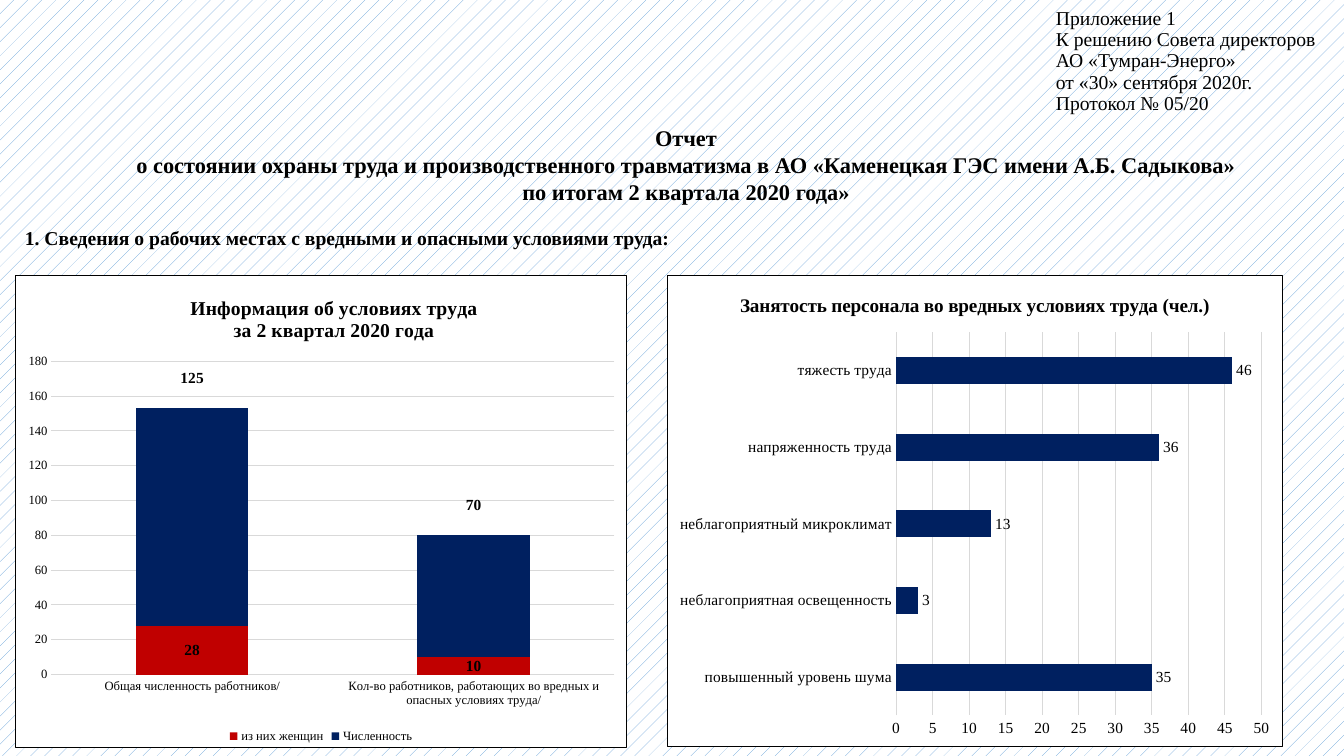
from dataclasses import dataclass

import lxml.etree
import pptx
import pptx.chart.chart
import pptx.chart.data
import pptx.chart.series
import pptx.dml.color
import pptx.enum.chart
import pptx.enum.dml
import pptx.enum.text
import pptx.oxml
import pptx.oxml.ns
import pptx.slide
import pptx.text.text
import pptx.util

PX = 12192000 // 1344
FONT = "Times New Roman"
COLORS = {"ink": "000000", "paper": "FFFFFF", "grid": "D9D9D9",
          "navy": "002060", "red": "C00000", "pattern": "5B9BD5"}
CHART_TYPES = pptx.enum.chart.XL_CHART_TYPE
LABELS = pptx.enum.chart.XL_LABEL_POSITION
ALIGN = pptx.enum.text.PP_ALIGN
ANCHOR = pptx.enum.text.MSO_ANCHOR


@dataclass(frozen=True)
class Area:
    left: int
    top: int
    width: int
    height: int

    def emu(self) -> list[int]:
        return [side * PX for side in (self.left, self.top, self.width, self.height)]


@dataclass(frozen=True)
class TextBlock:
    area: Area
    paras: tuple[str, ...]
    size: int
    bold: bool = True
    wrap: bool = True
    align: ALIGN = ALIGN.LEFT
    spacing: float = 1.0
    anchor: ANCHOR = ANCHOR.TOP


@dataclass(frozen=True)
class Bars:
    name: str
    values: tuple[int, ...]
    color: str
    position: LABELS
    label_shifts: tuple[int, ...] = ()


@dataclass(frozen=True)
class ChartPanel:
    area: Area
    plot: Area
    kind: CHART_TYPES
    title: tuple[str, ...]
    title_size: float
    title_corner: tuple[int, int] | None
    categories: tuple[str, ...]
    series: tuple[Bars, ...]
    axis_size: int
    gap: int
    stacked: bool


TEXTS = (
    TextBlock(Area(15, 221, 670, 34),
              ("1. Сведения о рабочих местах с вредными и опасными условиями труда:",),
              14, wrap=False),
    TextBlock(Area(1046, -7, 310, 137),
              ("Приложение 1\nК решению Совета директоров\nАО «Тумран-Энерго»\n"
               "от «30» сентября 2020г.\nПротокол № 05/20",),
              14, bold=False, spacing=0.9, anchor=ANCHOR.MIDDLE),
    TextBlock(Area(99, 119, 1174, 92),
              ("Отчет", "о состоянии охраны труда и производственного травматизма в "
               "АО «Каменецкая ГЭС имени А.Б. Садыкова»", "по итогам 2 квартала 2020 года»"),
              16, align=ALIGN.CENTER),
)
PANELS = (
    ChartPanel(
        Area(15, 275, 612, 473), Area(51, 361, 564, 314), CHART_TYPES.COLUMN_STACKED,
        ("Информация об условиях труда", "за 2 квартал 2020 года"), 14, (187, 292),
        ("Общая численность работников/",
         "Кол-во работников, работающих во вредных и опасных условиях труда/"),
        (Bars("из них женщин", (28, 10), "red", LABELS.CENTER),
         Bars("Численность", (125, 70), "navy", LABELS.CENTER, (-139, -91))),
        axis_size=9, gap=150, stacked=True),
    ChartPanel(
        Area(667, 275, 616, 472), Area(896, 332, 366, 384), CHART_TYPES.BAR_CLUSTERED,
        ("Занятость персонала во вредных условиях труда (чел.)",), 13.7, None,
        ("повышенный уровень шума", "неблагоприятная освещенность",
         "неблагоприятный микроклимат", "напряженность труда", "тяжесть труда"),
        (Bars("Численность", (35, 3, 13, 36, 46), "navy", LABELS.OUTSIDE_END),),
        axis_size=11, gap=182, stacked=False),
)


def rgb(name: str) -> pptx.dml.color.RGBColor:
    return pptx.dml.color.RGBColor.from_string(COLORS[name])


def style_font(font: pptx.text.text.Font, size: float, bold: bool = False) -> None:
    font.name, font.size, font.bold = FONT, pptx.util.Pt(size), bold
    font.color.rgb = rgb("ink")


def write_paras(frame: pptx.text.text.TextFrame, paras: tuple[str, ...], size: float,
                bold: bool, align: ALIGN, spacing: float = 1.0) -> None:
    for index, text in enumerate(paras):
        para = frame.add_paragraph() if index else frame.paragraphs[0]
        para.alignment, para.line_spacing = align, spacing
        for number, line in enumerate(text.split("\n")):
            if number:
                para.add_line_break()
            span = para.add_run()
            span.text = line
            style_font(span.font, size, bold)


def add_text(page: pptx.slide.Slide, block: TextBlock) -> None:
    frame = page.shapes.add_textbox(*block.area.emu()).text_frame
    frame.word_wrap, frame.vertical_anchor = block.wrap, block.anchor
    write_paras(frame, block.paras, block.size, block.bold, block.align, block.spacing)


def chart_xml(body: str) -> lxml.etree._Element:
    tag, rest = body.split(">", 1)
    return pptx.oxml.parse_xml(f'{tag} {pptx.oxml.ns.nsdecls("c", "a")}>{rest}')


def set_layout(parent: lxml.etree._Element, index: int, **values: str | float) -> None:
    """Put a manual layout at the given child index, replacing any other."""
    for old in parent.findall(pptx.oxml.ns.qn("c:layout")):
        parent.remove(old)
    body = "".join(f'<c:{tag} val="{value}"/>' for tag, value in values.items())
    parent.insert(index, chart_xml(f"<c:layout><c:manualLayout>{body}</c:manualLayout></c:layout>"))


def style_frame(chart: pptx.chart.chart.Chart, panel: ChartPanel) -> None:
    area, plot, root = panel.area, panel.plot, chart._chartSpace.chart
    fill = '<a:solidFill><a:srgbClr val="{}"/></a:solidFill>'
    root.addnext(chart_xml(f'<c:spPr>{fill.format(COLORS["paper"])}'
                           f'<a:ln w="9525">{fill.format(COLORS["ink"])}</a:ln></c:spPr>'))
    set_layout(root.plotArea, 0, layoutTarget="inner", xMode="edge", yMode="edge",
               x=(plot.left - area.left) / area.width, y=(plot.top - area.top) / area.height,
               w=plot.width / area.width, h=plot.height / area.height)
    write_paras(chart.chart_title.text_frame, panel.title, panel.title_size, True, ALIGN.CENTER)
    if panel.title_corner:
        left, top = panel.title_corner
        set_layout(chart.chart_title._element, 1, xMode="edge", yMode="edge",
                   x=(left - area.left) / area.width, y=(top - area.top) / area.height)


def style_axes(chart: pptx.chart.chart.Chart, size: int) -> None:
    for axis in (chart.category_axis, chart.value_axis):
        axis.major_tick_mark = axis.minor_tick_mark = pptx.enum.chart.XL_TICK_MARK.NONE
        style_font(axis.tick_labels.font, size)
    chart.value_axis.format.line.fill.background()
    for part in (chart.category_axis, chart.value_axis.major_gridlines):
        part.format.line.color.rgb, part.format.line.width = rgb("grid"), pptx.util.Pt(0.75)


def hide_leader_lines(labels: lxml.etree._Element) -> None:
    for old in labels.findall(pptx.oxml.ns.qn("c:showLeaderLines")):
        labels.remove(old)
    labels.append(chart_xml('<c:showLeaderLines val="0"></c:showLeaderLines>'))
    labels.append(chart_xml(
        '<c:extLst><c:ext uri="{CE6537A1-D6FC-4f65-9D91-7224C49458BB}"><c15:showLeaderLines '
        'xmlns:c15="http://schemas.microsoft.com/office/drawing/2012/chart" val="0"/>'
        '</c:ext></c:extLst>'))


def style_series(series: pptx.chart.series.BarSeries, bars: Bars, panel: ChartPanel) -> None:
    series.format.fill.solid()
    series.format.fill.fore_color.rgb = rgb(bars.color)
    labels = series.data_labels
    labels.show_value, labels.position = True, bars.position
    style_font(labels.font, 11, panel.stacked)
    for index, shift in enumerate(bars.label_shifts):
        label = series.points[index].data_label
        style_font(label.font, 11, panel.stacked)
        label.position = bars.position
        set_layout(label._dLbl, 1, x=0, y=shift / panel.area.height)
    hide_leader_lines(labels._element)


def add_panel(page: pptx.slide.Slide, panel: ChartPanel) -> None:
    data = pptx.chart.data.CategoryChartData(number_format="#,##0")
    data.categories = panel.categories
    for bars in panel.series:
        data.add_series(bars.name, bars.values)
    chart = page.shapes.add_chart(panel.kind, *panel.area.emu(), data).chart
    style_font(chart.font, panel.axis_size)
    style_frame(chart, panel)
    style_axes(chart, panel.axis_size)
    plot = chart.plots[0]
    plot.gap_width, plot.vary_by_categories = panel.gap, False
    for series, bars in zip(plot.series, panel.series):
        style_series(series, bars, panel)
    chart.has_legend = panel.stacked
    if panel.stacked:
        chart.legend.position = pptx.enum.chart.XL_LEGEND_POSITION.BOTTOM
        chart.legend.include_in_layout = False
        style_font(chart.legend.font, panel.axis_size)


deck = pptx.Presentation()
deck.slide_width, deck.slide_height = 1344 * PX, 756 * PX
page = deck.slides.add_slide(deck.slide_layouts[6])
backdrop = page.background.fill
backdrop.patterned()
backdrop.pattern = pptx.enum.dml.MSO_PATTERN.PERCENT_5
backdrop.fore_color.rgb, backdrop.back_color.rgb = rgb("pattern"), rgb("paper")
for panel in PANELS:
    add_panel(page, panel)
for block in TEXTS:
    add_text(page, block)
deck.save("out.pptx")
